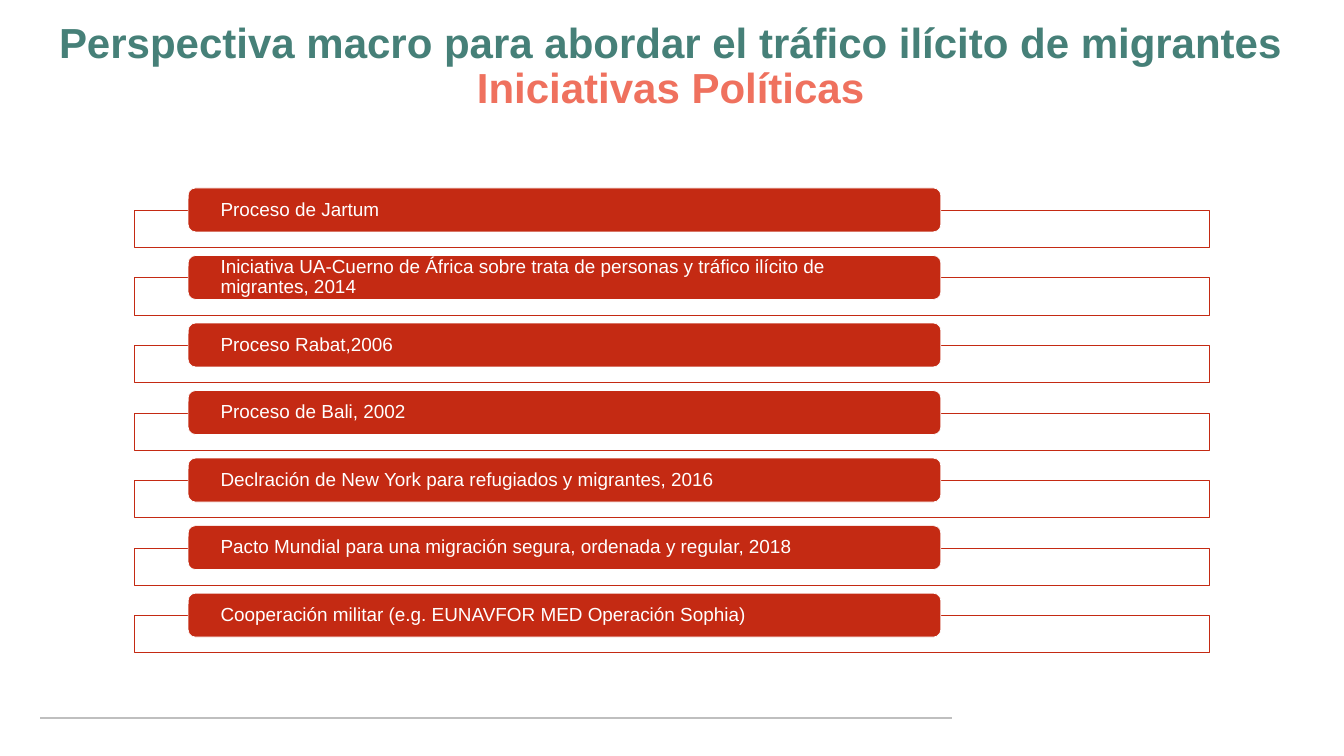
from lxml import etree
from pptx import Presentation
from pptx.dml.color import RGBColor
from pptx.enum.shapes import MSO_CONNECTOR, MSO_SHAPE
from pptx.enum.text import MSO_ANCHOR, MSO_AUTO_SIZE, PP_ALIGN
from pptx.oxml.ns import qn
from pptx.util import Inches, Pt

RECTANGLE, ROUNDED = MSO_SHAPE.RECTANGLE, MSO_SHAPE.ROUNDED_RECTANGLE
STRAIGHT = MSO_CONNECTOR.STRAIGHT
MIDDLE = MSO_ANCHOR.MIDDLE
LEFT, CENTER = PP_ALIGN.LEFT, PP_ALIGN.CENTER
NO_AUTOFIT = MSO_AUTO_SIZE.NONE
TITLE_ONLY = 5

WIDTH, HEIGHT = 26.66, 15
FONT = "Arial"
COLORS = {"green": "468078", "coral": "EF715E", "red": "C42A13",
          "white": "FFFFFF", "gray": "BFBFBF"}

TITLE = ("Perspectiva macro para abordar el tráfico ilícito de migrantes",
         "Iniciativas Políticas")
INITIATIVES = [
    "Proceso de Jartum",
    "Iniciativa UA-Cuerno de África sobre trata de personas y tráfico ilícito de migrantes, 2014",
    "Proceso Rabat,2006",
    "Proceso de Bali, 2002",
    "Declración de New York para refugiados y migrantes, 2016",
    "Pacto Mundial para una migración segura, ordenada y regular, 2018",
    "Cooperación militar (e.g. EUNAVFOR MED Operación Sophia)",
]


def color(name):
    return RGBColor.from_string(COLORS[name])


def format_frame(text_frame, side, edge):
    text_frame.word_wrap = True
    text_frame.auto_size = NO_AUTOFIT
    text_frame.vertical_anchor = MIDDLE
    text_frame.margin_left = text_frame.margin_right = Inches(side)
    text_frame.margin_top = text_frame.margin_bottom = Inches(edge)


def format_paragraph(paragraph, alignment, size):
    paragraph.alignment = alignment
    paragraph.line_spacing = 0.9
    paragraph.font.name = FONT
    paragraph.font.size = Pt(size)


def add_box(shapes, kind, box, fill, line):
    shape = shapes.add_shape(kind, *[Inches(value) for value in box])
    shape.shadow.inherit = False
    shape.fill.solid()
    shape.fill.fore_color.rgb = color(fill)
    shape.line.color.rgb = color(line)
    shape.line.width = Pt(1)
    return shape


def place_title(title, box):
    title.left, title.top, title.width, title.height = [Inches(v) for v in box]
    format_frame(title.text_frame, 0.2, 0.1)
    paragraph = title.text_frame.paragraphs[0]
    paragraph.text = "\v".join(TITLE)
    format_paragraph(paragraph, CENTER, 60)
    for run, name in zip(paragraph.runs, ("green", "coral")):
        run.font.name = FONT
        run.font.size = Pt(60)
        run.font.bold = True
        run.font.color.rgb = color(name)


def add_initiative_list(slide, box):
    """Stack equal rows: an outlined frame with a label over its top edge."""
    left, top, width, height = box
    row = height / len(INITIATIVES)
    group = slide.shapes.add_group_shape()
    for index, text in enumerate(INITIATIVES):
        row_top = top + index * row

        # Outlined frame, slightly see-through
        frame = add_box(group.shapes, RECTANGLE,
                        (left, row_top + 0.33 * row, width, 0.55 * row), "white", "red")
        fill_color = frame.fill._xPr.find(qn("a:solidFill"))[0]
        etree.SubElement(fill_color, qn("a:alpha"), val="90000")

        # Label
        label = add_box(group.shapes, ROUNDED,
                        (left + 0.05 * width, row_top, 0.7 * width, 0.65 * row), "red", "white")
        format_frame(label.text_frame, 0.6, 0)
        paragraph = label.text_frame.paragraphs[0]
        paragraph.text = text
        format_paragraph(paragraph, LEFT, 27)
        paragraph.font.color.rgb = color("white")


def add_footer_rule(slide, left, right, y):
    rule = slide.shapes.add_connector(
        STRAIGHT, Inches(left), Inches(y), Inches(right), Inches(y))
    rule.line.color.rgb = color("gray")
    rule.line.width = Pt(2.25)
    etree.SubElement(rule._element.spPr, qn("a:effectLst"))


def main():
    presentation = Presentation()
    presentation.slide_width = Inches(WIDTH)
    presentation.slide_height = Inches(HEIGHT)
    slide = presentation.slides.add_slide(presentation.slide_layouts[TITLE_ONLY])
    add_footer_rule(slide, 0.03 * WIDTH, 0.708 * WIDTH, 0.95 * HEIGHT)
    place_title(slide.shapes.title, (0.8, -0.11, 25.01, 2.9))
    add_initiative_list(slide, (0.1 * WIDTH, 3.73, 0.8 * WIDTH, 9.38))
    presentation.save("out.pptx")


if __name__ == "__main__":
    main()
